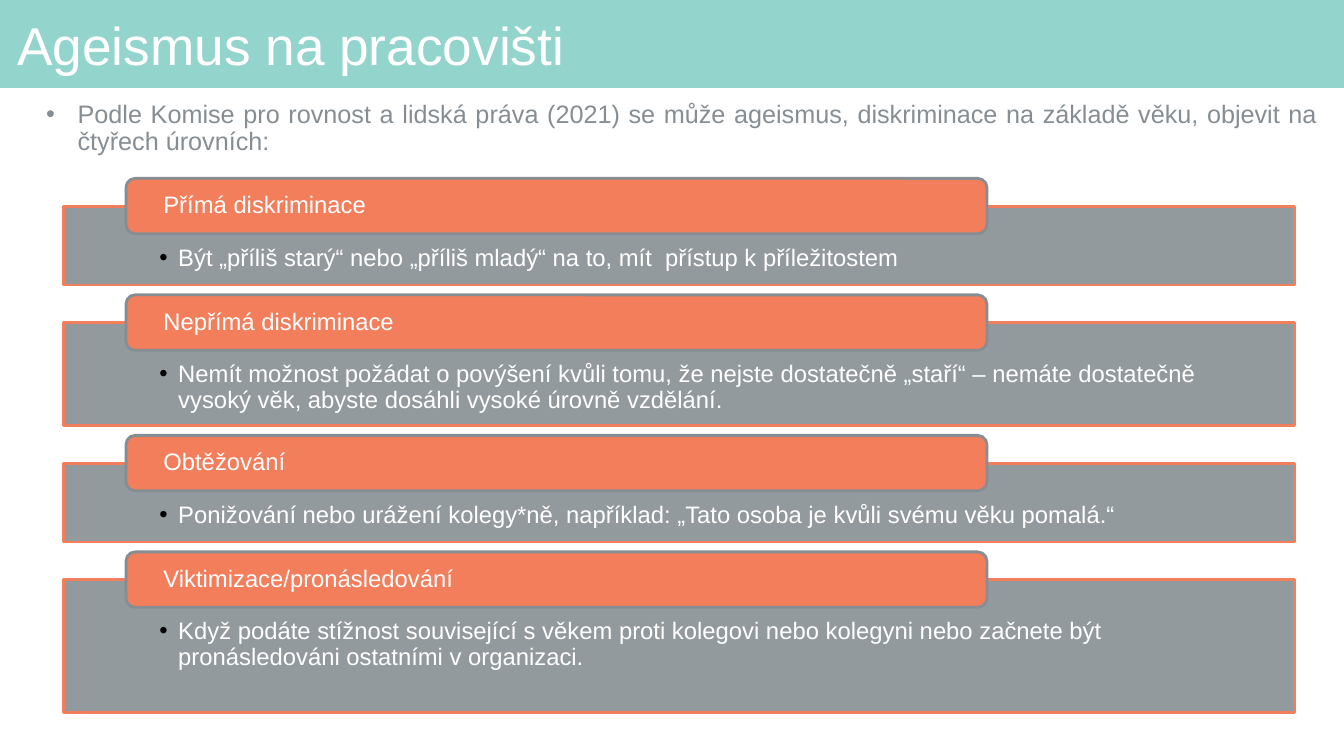
from lxml import etree
from pptx import Presentation
from pptx.dml.color import RGBColor
from pptx.enum import shapes, text
from pptx.oxml.ns import qn
from pptx.util import Pt

TITLE = "Ageismus na pracovišti"
INTRO = ("Podle Komise pro rovnost a lidská práva (2021) se může ageismus, "
         "diskriminace na základě věku, objevit na čtyřech úrovních:")
# heading, explanation, height of the explanation panel
LEVELS = [
    ("Přímá diskriminace",
     "Být „příliš starý“ nebo „příliš mladý“ na to, mít  přístup k příležitostem", 56.2),
    ("Nepřímá diskriminace",
     "Nemít možnost požádat o povýšení kvůli tomu, že nejste dostatečně „staří“ – "
     "nemáte dostatečně vysoký věk, abyste dosáhli vysoké úrovně vzdělání.", 73.4),
    ("Obtěžování",
     "Ponižování nebo urážení kolegy*ně, například: „Tato osoba je kvůli svému věku "
     "pomalá.“", 56.2),
    ("Viktimizace/pronásledování",
     "Když podáte stížnost související s věkem proti kolegovi nebo kolegyni nebo "
     "začnete být pronásledováni ostatními v organizaci.", 95),
]
COLORS = {"teal": "93D4CC", "grey": "868E93", "orange": "F27E5C",
          "white": "FFFFFF", "black": "000000"}
FONT = "Arial"
PANEL_LEFT, PANEL_TOP, PANEL_WIDTH, PANEL_GAP = 45.4, 147.4, 879, 27
LABEL_LEFT, LABEL_WIDTH, LABEL_HEIGHT, LABEL_RISE = 90, 615, 39.6, 20
TOP, MIDDLE = text.MSO_ANCHOR.TOP, text.MSO_ANCHOR.MIDDLE


def rgb(name):
    return RGBColor.from_string(COLORS[name])


def add_box(s, kind, box, fill, line=None):
    sp = s.shapes.add_shape(kind, *map(Pt, box))
    sp.shadow.inherit = False
    sp.fill.solid()
    sp.fill.fore_color.rgb = rgb(fill)
    if line:
        sp.line.color.rgb = rgb(line)
        sp.line.width = Pt(2)
    else:
        sp.line.fill.background()
    return sp


def write(sp, words, size, color, insets, anchor, align=text.PP_ALIGN.LEFT):
    tf = sp.text_frame
    frame = dict(zip(("margin_left", "margin_top", "margin_right", "margin_bottom"),
                     map(Pt, insets)), word_wrap=True, vertical_anchor=anchor)
    for name, value in frame.items():
        setattr(tf, name, value)
    p = tf.paragraphs[0]
    p.alignment, p.line_spacing = align, 0.9
    r = p.add_run()
    r.text = words
    for name, value in {"name": FONT, "size": Pt(size)}.items():
        setattr(r.font, name, value)
    r.font.color.rgb = rgb(color)
    return p


def add_bullet(p, color, left, hanging):
    pPr = p._p.get_or_add_pPr()
    pPr.set("marL", str(Pt(left)))
    pPr.set("indent", str(-Pt(hanging)))
    clr = etree.SubElement(pPr, qn("a:buClr"))
    etree.SubElement(clr, qn("a:srgbClr"), val=COLORS[color])
    etree.SubElement(pPr, qn("a:buFont"), typeface=FONT)
    etree.SubElement(pPr, qn("a:buChar"), char="•")


def set_opacity(sp, percent):
    clr = sp.fill._xPr.find(qn("a:solidFill"))[0]
    etree.SubElement(clr, qn("a:alpha"), val=str(percent * 1000))


def add_level(s, top, heading, explanation, height):
    panel = add_box(s, shapes.MSO_SHAPE.RECTANGLE,
                    (PANEL_LEFT, top, PANEL_WIDTH, height), "grey", "orange")
    set_opacity(panel, 89)
    p = write(panel, explanation, 17, "white", (68.4, 28, 68.4, 9.4), TOP)
    add_bullet(p, "black", 13.5, 13.5)
    label = add_box(s, shapes.MSO_SHAPE.ROUNDED_RECTANGLE,
                    (LABEL_LEFT, top - LABEL_RISE, LABEL_WIDTH, LABEL_HEIGHT),
                    "orange", "grey")
    write(label, heading, 17, "white", (24.8, 0, 24.8, 0), MIDDLE)


def main():
    prs = Presentation()
    prs.slide_width, prs.slide_height = Pt(960), Pt(540)
    s = prs.slides.add_slide(prs.slide_layouts[6])

    add_box(s, shapes.MSO_SHAPE.RECTANGLE, (0, 0, 960, 62.8), "teal")
    title = s.shapes.add_textbox(*map(Pt, (7.9, 6.5, 940.3, 56.2)))
    write(title, TITLE, 38, "white", (4.3, 4.3, 4.3, 4.3), MIDDLE)

    intro = s.shapes.add_textbox(*map(Pt, (7.9, 69.1, 940.3, 50)))
    p = write(intro, INTRO, 18, "grey", (7.2, 3.6, 7.2, 3.6), TOP, text.PP_ALIGN.JUSTIFY)
    p.space_before = Pt(10)
    add_bullet(p, "grey", 40.5, 22.5)

    top = PANEL_TOP
    for heading, explanation, height in LEVELS:
        add_level(s, top, heading, explanation, height)
        top += height + PANEL_GAP

    prs.save("out.pptx")


if __name__ == "__main__":
    main()
